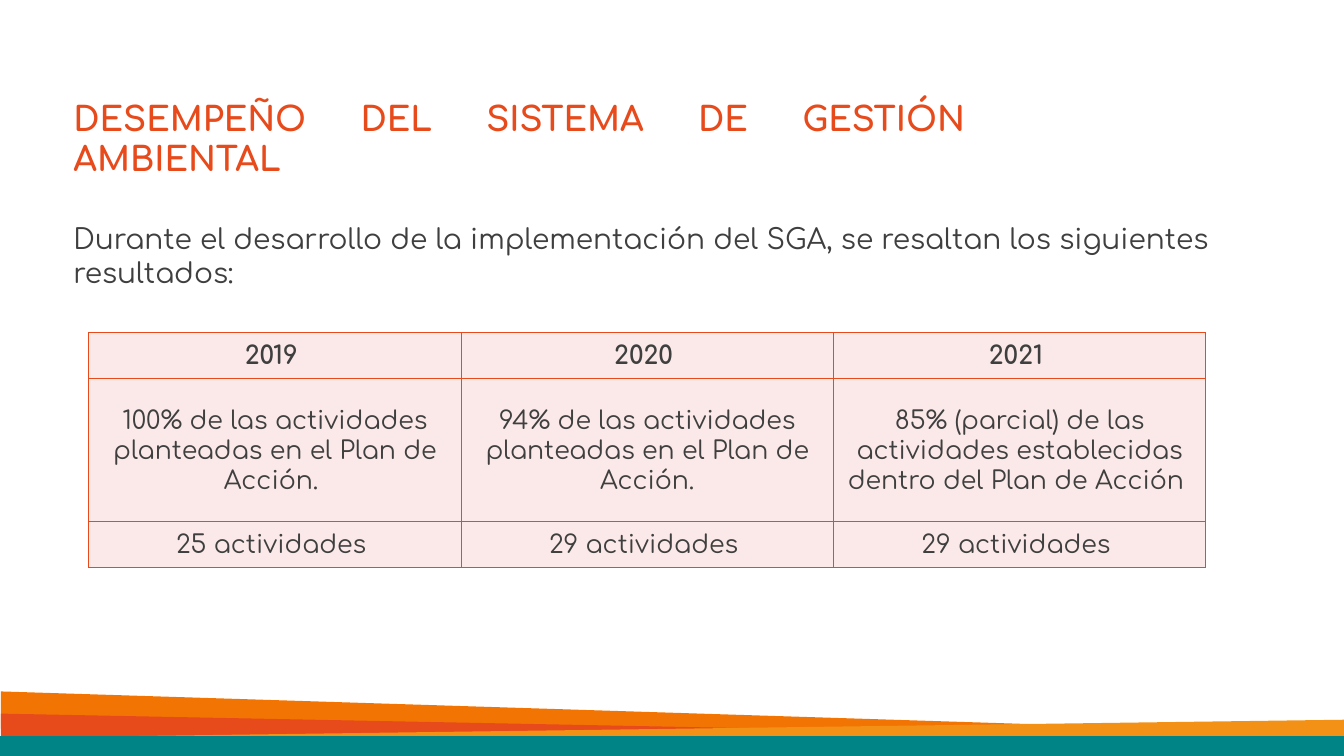
from dataclasses import dataclass

from lxml.etree import SubElement
from pptx import Presentation
from pptx.dml.color import RGBColor
from pptx.enum.text import MSO_ANCHOR as Anchor, MSO_AUTO_SIZE as AutoSize, PP_ALIGN as Align
from pptx.oxml.ns import qn
from pptx.util import Inches, Pt


@dataclass(frozen=True)
class Theme:
    font: str = "Comfortaa"
    text: str = "3F3F3F"
    accent: str = "E74A1B"
    cell: str = "FAE9E8"
    orange: str = "F27503"
    amber: str = "F29115"
    teal: str = "008486"
    title_size: int = 24
    body_size: int = 20
    table_size: int = 18


def write_text(frame, text, *, font, size, color, bold=False, align=Align.LEFT, spacing=None):
    paragraph = frame.paragraphs[0]
    paragraph.alignment = align
    paragraph.line_spacing = spacing
    run = paragraph.add_run()
    run.text = text
    run.font.name = font
    run.font.size = Pt(size)
    run.font.bold = bold
    run.font.color.rgb = RGBColor.from_string(color)


class SlideBuilder:
    def __init__(self, slide, theme):
        self.slide = slide
        self.theme = theme

    def band(self, points, color):
        corners = [(Inches(x), Inches(y)) for x, y in points]
        builder = self.slide.shapes.build_freeform(*corners[0])
        builder.add_line_segments(corners[1:], close=True)
        shape = builder.convert_to_shape()
        shape.shadow.inherit = False
        shape.fill.solid()
        shape.fill.fore_color.rgb = RGBColor.from_string(color)
        shape.line.fill.background()

    def text(self, left, top, width, height, text, **style):
        box = self.slide.shapes.add_textbox(Inches(left), Inches(top), Inches(width), Inches(height))
        frame = box.text_frame
        frame.word_wrap = True
        frame.auto_size = AutoSize.SHAPE_TO_FIT_TEXT
        write_text(frame, text, font=self.theme.font, **style)

    def border(self, cell):
        properties = cell._tc.get_or_add_tcPr()
        for side in ("lnL", "lnR", "lnT", "lnB"):
            line = SubElement(properties, qn(f"a:{side}"), w=str(Pt(1)))
            fill = SubElement(line, qn("a:solidFill"))
            SubElement(fill, qn("a:srgbClr"), val=self.theme.accent)

    def table(self, left, top, width, heights, rows):
        columns = len(rows[0])
        frame = self.slide.shapes.add_table(
            len(rows), columns, Inches(left), Inches(top), Inches(width), Inches(sum(heights)))
        table = frame.table
        table.horz_banding = False
        for column in table.columns:
            column.width = Inches(width / columns)
        for row_index, (height, texts) in enumerate(zip(heights, rows)):
            table.rows[row_index].height = Inches(height)
            for column_index, text in enumerate(texts):
                cell = table.cell(row_index, column_index)
                self.border(cell)
                cell.fill.solid()
                cell.fill.fore_color.rgb = RGBColor.from_string(self.theme.cell)
                cell.vertical_anchor = Anchor.MIDDLE
                cell.margin_left = cell.margin_right = Inches(0.07)
                cell.margin_top = cell.margin_bottom = 0
                write_text(cell.text_frame, text, font=self.theme.font,
                           size=self.theme.table_size, color=self.theme.text,
                           bold=row_index == 0, align=Align.CENTER, spacing=1.07)


def main():
    presentation = Presentation()
    presentation.slide_width = Inches(13.33)
    presentation.slide_height = Inches(7.5)
    theme = Theme()
    builder = SlideBuilder(presentation.slides.add_slide(presentation.slide_layouts[6]), theme)

    builder.band([(0.01, 7.23), (0.01, 6.86), (11.66, 7.23)], theme.orange)
    builder.band([(0.01, 7.34), (0.01, 7.08), (13.33, 7.34)], theme.accent)
    builder.band([(13.33, 7.32), (13.33, 7.14), (0.01, 7.32)], theme.amber)
    builder.band([(-0.06, 7.3), (13.33, 7.3), (13.33, 7.5), (-0.06, 7.5)], theme.teal)

    builder.table(0.88, 3.3, 11.08, (0.455, 1.42, 0.455), [
        ("2019 ", "2020 ", "2021 "),
        ("100% de las actividades planteadas en el Plan de Acción. ",
         "94% de las actividades planteadas en el Plan de Acción.",
         "85% (parcial) de las actividades establecidas dentro del Plan de Acción "),
        ("25 actividades ", "29 actividades ", "29 actividades "),
    ])
    builder.text(0.63, 2.15, 12.17, 0.44,
                 "Durante el desarrollo de la implementación del SGA, "
                 "se resaltan los siguientes resultados:",
                 size=theme.body_size, color=theme.text)
    builder.text(0.63, 0.92, 9.04, 0.5, "DESEMPEÑO DEL SISTEMA DE GESTIÓN AMBIENTAL",
                 size=theme.title_size, color=theme.accent, bold=True, align=Align.JUSTIFY)

    presentation.save("out.pptx")


if __name__ == "__main__":
    main()
